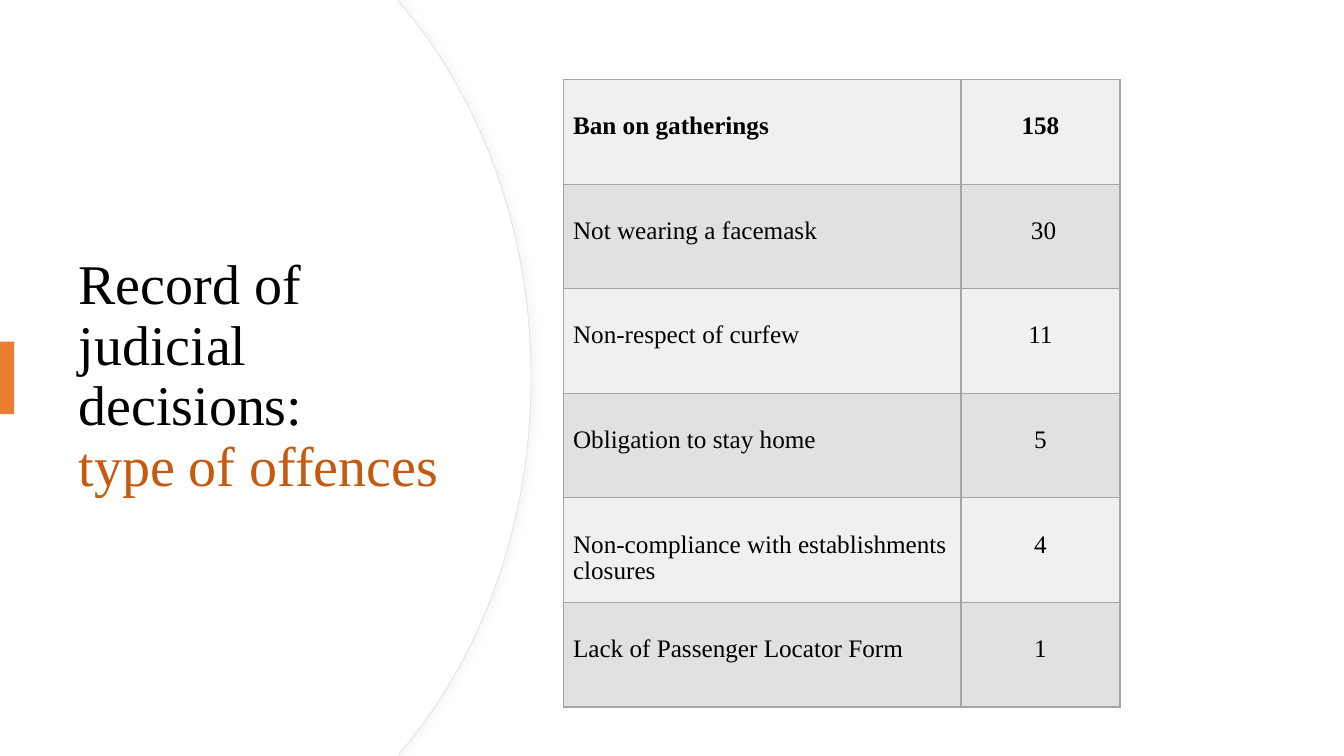
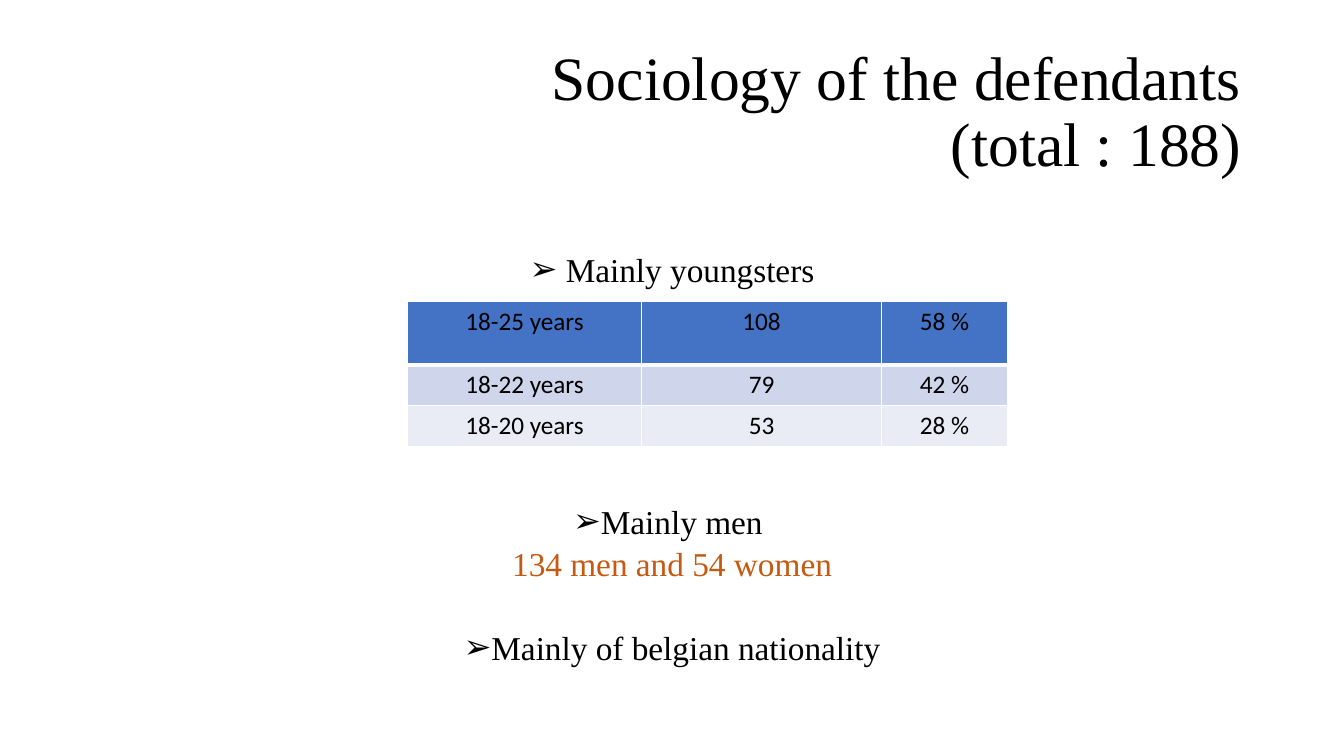
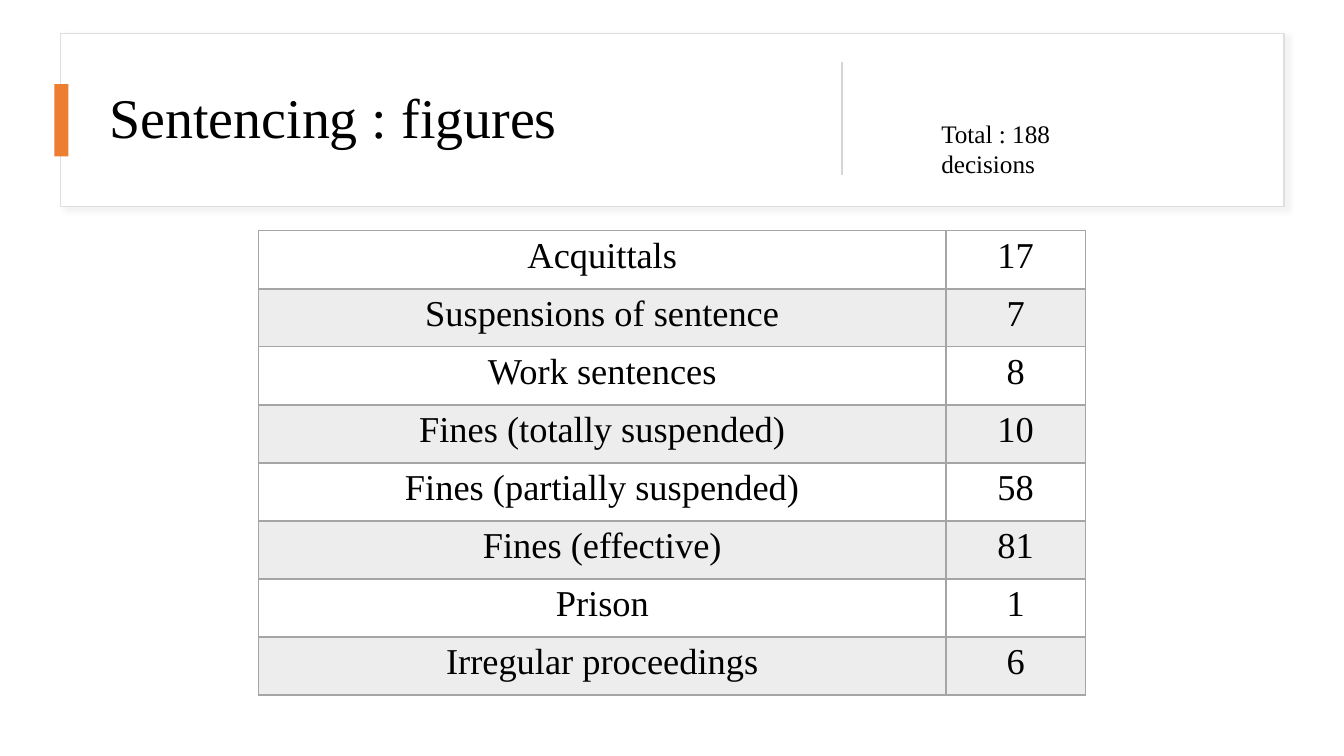
from lxml import etree
from pptx import Presentation
from pptx.dml.color import RGBColor
from pptx.enum.shapes import MSO_CONNECTOR, MSO_SHAPE
from pptx.enum.text import MSO_ANCHOR, MSO_AUTO_SIZE, PP_ALIGN
from pptx.oxml.ns import qn
from pptx.util import Pt

LEFT, CENTER, RIGHT = PP_ALIGN.LEFT, PP_ALIGN.CENTER, PP_ALIGN.RIGHT
MIDDLE = MSO_ANCHOR.MIDDLE
NO_FIT = MSO_AUTO_SIZE.NONE
RECT = MSO_SHAPE.RECTANGLE
STRAIGHT = MSO_CONNECTOR.STRAIGHT

WIDTH, HEIGHT = 960, 540
SERIF, SANS = "Times New Roman", "Calibri"
BLACK, WHITE, ORANGE, RUST = "000000", "FFFFFF", "ED7D31", "C55A11"
GREY, BLUE = "A5A5A5", "4472C4"


def rgb(color):
    return RGBColor.from_string(color)


def child(parent, tag, **attrs):
    return etree.SubElement(parent, qn(tag), {k: str(v) for k, v in attrs.items()})


def curve(segments):
    """Join three line segments of an outline into one cubic curve."""
    cubic = etree.Element(qn("a:cubicBezTo"))
    segments[0].addprevious(cubic)
    for segment in segments:
        cubic.append(segment[0])
        segment.getparent().remove(segment)


class Deck:
    """Holds the shared style and the slide being built."""

    def __init__(self):
        self.prs = Presentation()
        self.prs.slide_width, self.prs.slide_height = Pt(WIDTH), Pt(HEIGHT)
        self.s = None

    def slide(self):
        self.s = self.prs.slides.add_slide(self.prs.slide_layouts[5])

    def font(self, p, size, color=BLACK, name=SERIF, bold=False):
        for r in p.runs:
            r.font.size, r.font.name, r.font.bold = Pt(size), name, bold
            r.font.color.rgb = rgb(color)

    def title(self, text, x, y, w, h, size, align=LEFT):
        sp = self.s.shapes.title
        self.s.shapes._spTree.append(sp._element)
        sp.left, sp.top, sp.width, sp.height = Pt(x), Pt(y), Pt(w), Pt(h)
        tf = sp.text_frame
        tf.text = text
        tf.word_wrap, tf.auto_size, tf.vertical_anchor = True, NO_FIT, MIDDLE
        p = tf.paragraphs[0]
        p.alignment, p.line_spacing = align, 0.9
        self.font(p, size)
        return p

    def paint(self, sp, fill, line=None, line_width=1, shadow=None):
        sp.fill.solid()
        sp.fill.fore_color.rgb = rgb(fill)
        if line:
            sp.line.color.rgb = rgb(line)
            sp.line.width = Pt(line_width)
        else:
            sp.line.fill.background()
        sp.shadow.inherit = False
        if shadow:
            color, angle = shadow
            effects = sp._element.spPr.find(qn("a:effectLst"))
            outer = child(effects, "a:outerShdw", blurRad=Pt(4), dist=Pt(3),
                          dir=angle * 60000, algn="tl", rotWithShape=0)
            child(child(outer, "a:srgbClr", val=color), "a:alpha", val=20000)

    def rect(self, x, y, w, h, fill, **style):
        sp = self.s.shapes.add_shape(RECT, Pt(x), Pt(y), Pt(w), Pt(h))
        self.paint(sp, fill, **style)

    def accent(self, x, y):
        self.rect(x, y, 10.1, 51.8, ORANGE)

    def round_panel(self, right, **style):
        upper = [(right - 95.7, 0), (right - 90.7, 5.8), (right - 34.5, 73.4),
                 (right, 167), (right, HEIGHT / 2)]
        lower = [(x, HEIGHT - y) for x, y in reversed(upper[:-1])]
        builder = self.s.shapes.build_freeform(0, 0)
        builder.add_line_segments([(Pt(x), Pt(y)) for x, y in upper + lower + [(0, HEIGHT)]])
        sp = builder.convert_to_shape()
        segments = list(sp._element.iter(qn("a:lnTo")))
        curve(segments[2:5])
        curve(segments[5:8])
        self.paint(sp, WHITE, **style)

    def divider(self, x, top, bottom, color):
        c = self.s.shapes.add_connector(STRAIGHT, Pt(x), Pt(top), Pt(x), Pt(bottom))
        c.line.color.rgb, c.line.width = rgb(color), Pt(1.5)
        child(c._element.spPr, "a:effectLst")

    def text_box(self, x, y, w, h, lines):
        tf = self.s.shapes.add_textbox(Pt(x), Pt(y), Pt(w), Pt(h)).text_frame
        tf.word_wrap = True
        tf.text = "\n".join(lines)
        return tf.paragraphs

    def note(self, text, x, y, w, h, size):
        self.font(self.text_box(x, y, w, h, [text])[0], size)

    def findings(self, x, y, w, h, items, size):
        paragraphs = self.text_box(x, y, w, h, [text for text, *_ in items])
        for p, (_, gap, bullet, color) in zip(paragraphs, items):
            p.alignment, p.line_spacing, p.space_before = CENTER, Pt(20), Pt(gap)
            self.font(p, size, color)
            if bullet:
                pPr = p._p.get_or_add_pPr()
                pPr.set("marL", str(Pt(18)))
                pPr.set("indent", str(-Pt(18)))
                child(pPr, "a:buFont", typeface="Arial")
                child(pPr, "a:buChar", char="➢")

    def borders(self, cell, color, top, bottom):
        tcPr = cell._tc.get_or_add_tcPr()
        for tag, width in (("a:lnL", 1), ("a:lnR", 1), ("a:lnT", top), ("a:lnB", bottom)):
            ln = child(tcPr, tag, w=Pt(width))
            child(child(ln, "a:solidFill"), "a:srgbClr", val=color)

    def table(self, x, y, widths, heights, rows, fills, border, size, name=SERIF,
              first_align=CENTER, bold_first=False, header_line=1,
              margin_x=7.2, margin_top=3.6, spacing=1.0):
        frame = self.s.shapes.add_table(len(rows), len(widths), Pt(x), Pt(y),
                                        Pt(sum(widths)), Pt(sum(heights)))
        tbl = frame.table
        tbl.first_row = tbl.horz_banding = False
        for col, w in zip(tbl.columns, widths):
            col.width = Pt(w)
        for i, (row, h) in enumerate(zip(rows, heights)):
            tbl.rows[i].height = Pt(h)
            for j, text in enumerate(row):
                cell = tbl.cell(i, j)
                self.borders(cell, border, header_line if i == 1 else 1,
                             header_line if i == 0 else 1)
                cell.fill.solid()
                cell.fill.fore_color.rgb = rgb(fills[i])
                cell.margin_left = cell.margin_right = Pt(margin_x)
                cell.margin_top = Pt(margin_top)
                cell.text_frame.text = text
                p = cell.text_frame.paragraphs[0]
                p.alignment = CENTER if j else first_align
                p.line_spacing = spacing
                self.font(p, size, name=name, bold=bold_first and i == 0)


def offences(deck):
    deck.slide()
    deck.round_panel(379.4, line="E6E6E6", line_width=0.75, shadow=("D9D9D9", 0))
    deck.round_panel(378.7)
    p = deck.title("Record of judicial decisions: \vtype of offences", 49, 91.4, 283.7, 356.4, 40)
    p.runs[1].font.color.rgb = rgb(RUST)
    deck.accent(0, 244.1)
    rows = [("Ban on gatherings", "158"),
            ("Not wearing a facemask", " 30"),
            ("Non-respect of curfew", "11"),
            ("Obligation to stay home", "5"),
            ("Non-compliance with establishments closures", "4"),
            ("Lack of Passenger Locator Form", "1")]
    deck.table(402.4, 56.8, [284, 113.6], [74.7] * 6, rows, ["F0F0F0", "E1E1E1"] * 3, GREY, 18,
               first_align=LEFT, bold_first=True, margin_x=6.9, margin_top=24.4, spacing=0.95)


def sociology(deck):
    deck.slide()
    deck.title("Sociology of the defendants\v(total : 188)", 66.2, 28.8, 828, 104.4, 44, RIGHT)
    deck.findings(66, 182.9, 828, 303, [
        (" Mainly youngsters", 0, True, BLACK),
        ("Mainly men ", 160, True, BLACK),
        ("134 men and 54 women", 10, False, RUST),
        ("Mainly of belgian nationality", 40, True, BLACK)], 23.8)
    rows = [("18-25 years", "108", "58 %"),
            ("18-22 years", "79", "42 %"),
            ("18-20 years", "53", "28 %")]
    deck.table(291, 215.3, [167.4, 171.2, 90.2], [45.4, 29, 29], rows,
               [BLUE, "CFD5EA", "E9EBF5"], WHITE, 18, name=SANS, header_line=3)


def sentencing(deck):
    deck.slide()
    deck.rect(43.2, 23.8, 874, 123.8, WHITE, line="DEDEDE", shadow=("C5C3C3", 45))
    deck.title("Sentencing : figures", 71, 31.7, 506.2, 108, 40)
    deck.accent(38.9, 60)
    deck.divider(601.4, 44.6, 125, "D5D5D5")
    rows = [("Acquittals", "17"),
            ("Suspensions of sentence", "7"),
            ("Work sentences", "8"),
            ("Fines (totally suspended)", "10"),
            ("Fines (partially suspended)", "58"),
            ("Fines (effective)", "81"),
            ("Prison", "1"),
            ("Irregular proceedings", "6")]
    deck.table(184.8, 164.9, [491, 99.4], [41.45] * 8, rows, [WHITE, "EDEDED"] * 4, GREY, 26,
               header_line=2.25, margin_x=7.9)
    deck.note("Total : 188 decisions", 665.3, 80.8, 158.4, 50, 18)


def main():
    deck = Deck()
    for build in (offences, sociology, sentencing):
        build(deck)
    deck.prs.save("out.pptx")


if __name__ == "__main__":
    main()
